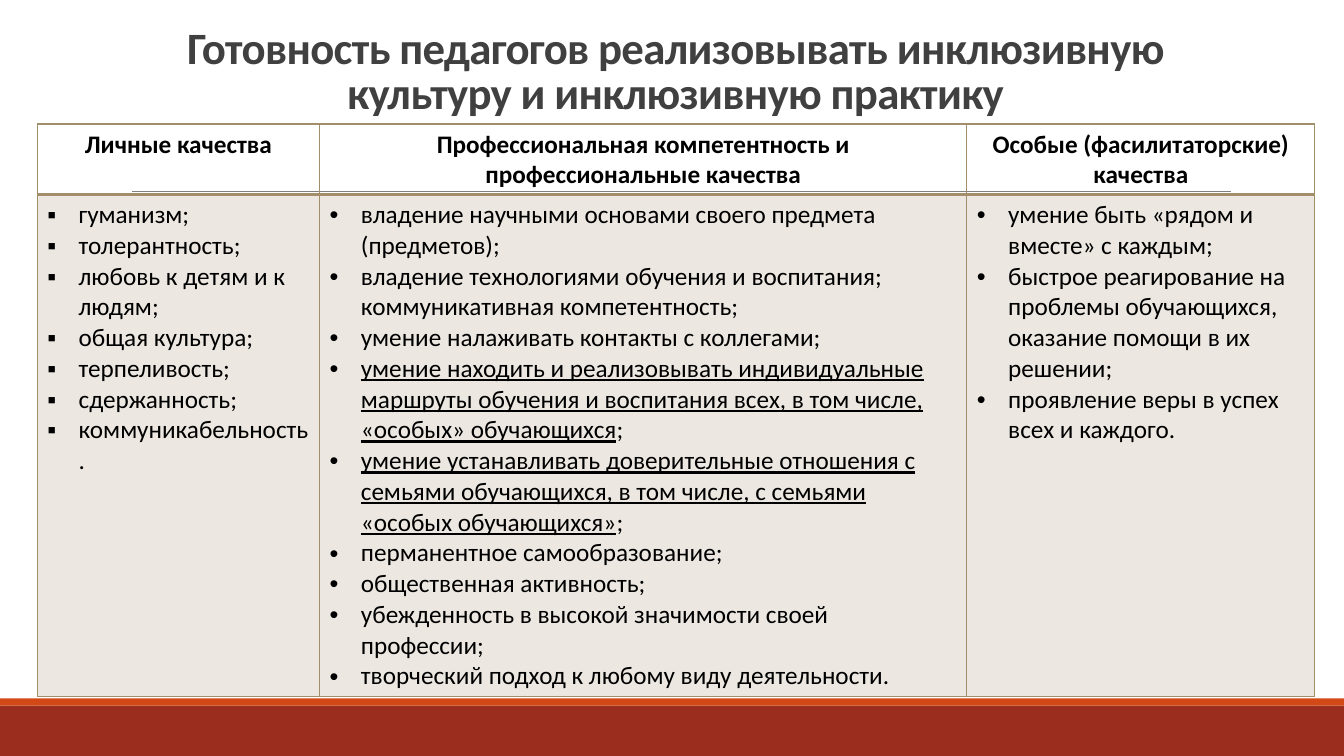
from dataclasses import dataclass
from lxml import etree
from pptx import Presentation
from pptx import util as u
from pptx.dml.color import RGBColor
from pptx.enum import shapes, text
from pptx.oxml import ns


@dataclass(frozen=True)
class Theme:
    font: str = "Calibri"
    head: float = 32
    body: float = 18
    ink: str = "000000"
    title: str = "404040"
    rule: str = "808080"
    tan: str = "A28E6A"
    band: str = "9B2D1F"
    strip: str = "D34817"


T = Theme()
W, H = 13.33, 7.5
INDENT = 0.31

TITLE = "Готовность педагогов реализовывать инклюзивную культуру и инклюзивную практику"
# Each column: width, heading, bullet, items; an item in a tuple is underlined up to its last part.
COLS = [
    (2.8, "Личные качества", "▪", [
        "гуманизм;",
        "толерантность;",
        "любовь к детям и к людям;",
        "общая культура;",
        "терпеливость;",
        "сдержанность;",
        "коммуникабельность.",
    ]),
    (6.42, "Профессиональная компетентность и профессиональные качества", "•", [
        "владение научными основами своего предмета (предметов);",
        "владение технологиями обучения и воспитания; коммуникативная компетентность;",
        "умение налаживать контакты с коллегами;",
        ("умение находить и реализовывать индивидуальные маршруты обучения "
         "и воспитания всех, в том числе, «особых» обучающихся", ";"),
        ("умение устанавливать доверительные отношения с семьями обучающихся, "
         "в том числе, с семьями «особых обучающихся»", ";"),
        "перманентное самообразование;",
        "общественная активность;",
        "убежденность в высокой значимости своей профессии;",
        "творческий подход к любому виду деятельности.",
    ]),
    (3.45, "Особые (фасилитаторские) качества", "•", [
        "умение быть «рядом и вместе» с каждым;",
        "быстрое реагирование на проблемы обучающихся, оказание помощи в их решении;",
        "проявление веры в успех всех и каждого.",
    ]),
]


def rgb(code):
    return RGBColor.from_string(code)


def sub(node, tag, **attrs):
    return etree.SubElement(node, ns.qn(tag), **attrs)


def style(para, size, color, bold=False):
    font = para.font
    font.name, font.size, font.bold = T.font, u.Pt(size), bold
    font.color.rgb = rgb(color)


def bar(slide, top, high, color):
    box = slide.shapes.add_shape(shapes.MSO_SHAPE.RECTANGLE, 0, u.Inches(top),
                                 u.Inches(W), u.Inches(high))
    box.shadow.inherit = False
    box.fill.solid()
    box.fill.fore_color.rgb = rgb(color)
    box.line.fill.background()


def frame(slide):
    """Footer bands and the thin rule behind the table."""
    bar(slide, 7, 0.5, T.band)
    bar(slide, 6.93, 0.07, T.strip)
    ends = [u.Inches(n) for n in (1.31, 1.9, 12.21, 1.9)]
    rule = slide.shapes.add_connector(shapes.MSO_CONNECTOR.STRAIGHT, *ends)
    rule.line.color.rgb = rgb(T.rule)
    rule.line.width = u.Pt(0.5)
    sub(rule._element.spPr, "a:effectLst")


def title(slide, box):
    shape = slide.shapes.add_textbox(*map(u.Inches, box))
    body = shape.text_frame
    body.word_wrap = True
    body.vertical_anchor = text.MSO_ANCHOR.BOTTOM
    para = body.paragraphs[0]
    para.text = TITLE
    para.alignment = text.PP_ALIGN.CENTER
    para.line_spacing = 0.85
    style(para, T.head, T.title, True)
    para.runs[0].font._element.set("spc", "-50")


def edge(cell, base):
    """Border all four sides; base is the width of the bottom one."""
    props = cell._tc.get_or_add_tcPr()
    for spot, (side, width) in enumerate(zip("LRTB", (1, 1, 1, base))):
        line = sub(props, f"a:ln{side}", w=str(u.Pt(width)))
        sub(sub(line, "a:solidFill"), "a:srgbClr", val=T.tan)
        props.insert(spot, line)


def heading(cell, words):
    cell.fill.background()
    edge(cell, 2)
    para = cell.text_frame.paragraphs[0]
    para.text = words
    para.alignment = text.PP_ALIGN.CENTER
    style(para, T.body, T.ink, True)


def point(para, mark, item):
    props = para._p.get_or_add_pPr()
    props.set("marL", str(u.Inches(INDENT)))
    props.set("indent", str(-u.Inches(INDENT)))
    sub(props, "a:buFont", typeface="Arial")
    sub(props, "a:buChar", char=mark)
    style(para, T.body, T.ink)
    parts = (item,) if isinstance(item, str) else item
    for part in parts:
        run = para.add_run()
        run.text = part
        if part is not parts[-1]:
            run.font.underline = True


def listing(cell, mark, items):
    cell.fill.solid()
    cell.fill.fore_color.rgb = rgb(T.tan)
    tint = cell._tc.tcPr.find(".//" + ns.qn("a:srgbClr"))
    sub(tint, "a:alpha", val="20000")
    edge(cell, 1)
    body = cell.text_frame
    for n, item in enumerate(items):
        point(body.add_paragraph() if n else body.paragraphs[0], mark, item)


def table(slide, left, top, rows):
    wide = sum(col[0] for col in COLS)
    box = [u.Inches(n) for n in (left, top, wide, sum(rows))]
    grid = slide.shapes.add_table(len(rows), len(COLS), *box).table
    grid.first_row = grid.horz_banding = False
    for row, high in zip(grid.rows, rows):
        row.height = u.Inches(high)
    for n, (width, words, mark, items) in enumerate(COLS):
        grid.columns[n].width = u.Inches(width)
        heading(grid.cell(0, n), words)
        listing(grid.cell(1, n), mark, items)


def main():
    deck = Presentation()
    deck.slide_width, deck.slide_height = u.Inches(W), u.Inches(H)
    slide = deck.slides.add_slide(deck.slide_layouts[6])
    frame(slide)
    title(slide, (1.2, 0.31, 11, 0.92))
    table(slide, 0.37, 1.23, (0.7, 4.98))
    deck.save("out.pptx")


if __name__ == "__main__":
    main()
